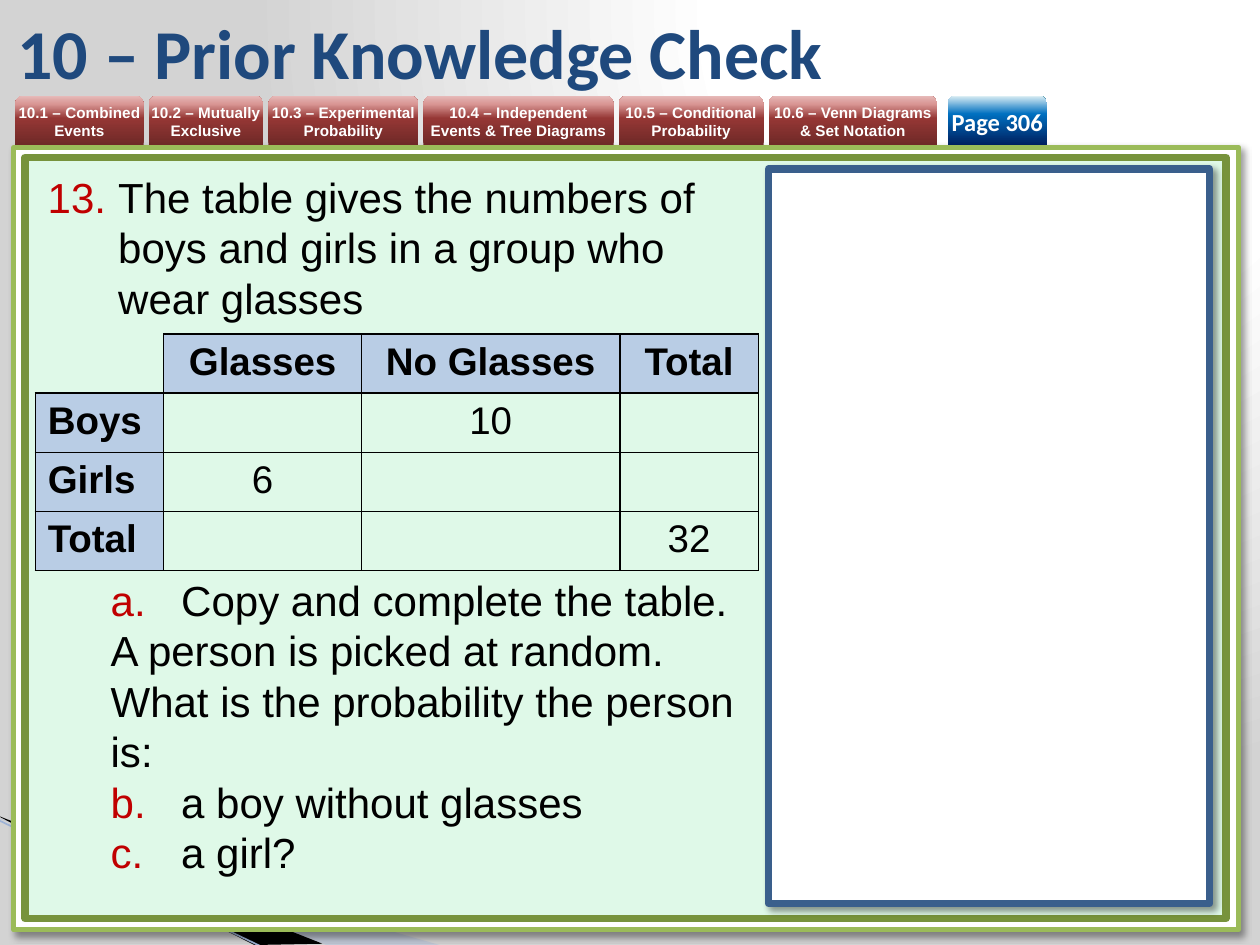
from lxml.etree import SubElement
from pptx import Presentation
from pptx.dml.color import RGBColor
from pptx.enum.shapes import MSO_CONNECTOR, MSO_SHAPE
from pptx.enum.text import MSO_ANCHOR, PP_ALIGN
from pptx.oxml.ns import qn
from pptx.util import Emu, Inches, Pt

BLACK = RGBColor(0, 0, 0)
WHITE = RGBColor(255, 255, 255)
NAVY = RGBColor(0x1F, 0x49, 0x7D)
RED = RGBColor(0xC0, 0, 0)
PALE_BLUE = RGBColor(0xB9, 0xCD, 0xE5)
SWOOSH_BLUE = RGBColor(0xA7, 0xB9, 0xDB)
SWOOSH_LINE = RGBColor(0x9E, 0xB3, 0xD6)
LIME = RGBColor(0x9B, 0xBB, 0x59)
OLIVE = RGBColor(0x77, 0x93, 0x3C)
MINT = RGBColor(0xDF, 0xF9, 0xE8)
STEEL = RGBColor(0x3A, 0x5F, 0x8C)

BACKDROP = [(0, "FFFFFF"), (40, "FFFFFF"), (100, "D3D3D3")]
TAB_RED = [(0, "6F2927"), (54, "953735"), (83, "D99694"), (100, "E6B9B8")]
PAGE_BLUE = [(0, "002060"), (63, "0070C0"), (100, "DBEEF4")]

TITLE = "10 – Prior Knowledge Check"
PAGE = "Page 306"
SECTIONS = [
    ("10.1 – Combined Events", 1.02),
    ("10.2 – Mutually Exclusive", 0.91),
    ("10.3 – Experimental Probability", 1.19),
    ("10.4 – Independent Events & Tree Diagrams", 1.51),
    ("10.5 – Conditional Probability", 1.15),
    ("10.6 – Venn Diagrams & Set Notation", 1.34),
]
PANELS = [
    ((0.11, 1.17, 9.72, 6.21), WHITE, LIME, 3, True),
    ((0.2, 1.25, 9.53, 6.04), MINT, OLIVE, 4.33, False),
    ((6.1, 1.34, 3.5, 5.83), WHITE, STEEL, 4.33, True),
]
QUESTION = [
    ("The table gives the numbers of boys and girls in a group who wear glasses",
     0.56, -0.56, ("arabicPeriod", 13)),
    ("Copy and complete the table.", 1.06, -0.56, ("alphaLcPeriod", 1)),
    ("A person is picked at random.\vWhat is the probability the person is:", 0.5, 0, None),
    ("a boy without glasses", 1.06, -0.56, ("alphaLcPeriod", 2)),
    ("a girl?", 1.06, -0.56, ("alphaLcPeriod", 2)),
]
TABLE_GAP = 144
GLASSES = [
    ["", "Glasses", "No Glasses", "Total"],
    ["Boys", "", "10", ""],
    ["Girls", "6", "", ""],
    ["Total", "", "", "32"],
]
COLUMN_WIDTHS = [1.02, 1.57, 2.05, 1.1]
ROW_HEIGHT = 0.47
TAB_TOP, TAB_HEIGHT, TAB_GAP = 0.76, 0.39, 0.04


def box(*lengths):
    return [Inches(length) for length in lengths]


def style(font, name, size, color, bold=False):
    font.name, font.size, font.bold = name, Pt(size), bold
    font.color.rgb = color


def set_gradient(fill, owner, stops, angle=None):
    fill.gradient()
    gradient = next(owner.iter(qn("a:gradFill")))
    for child in list(gradient):
        gradient.remove(child)
    stop_list = SubElement(gradient, qn("a:gsLst"))
    for position, color in stops:
        stop = SubElement(stop_list, qn("a:gs"), pos=str(position * 1000))
        SubElement(stop, qn("a:srgbClr"), val=color)
    if angle is None:
        circle = SubElement(gradient, qn("a:path"), path="circle")
        SubElement(circle, qn("a:fillToRect"), l="65000", t="0", r="0", b="98000")
    else:
        SubElement(gradient, qn("a:lin"), ang=str(angle * 60000), scaled="0")


def add_swoosh(slide, points, color, alpha=100):
    corners = [box(*point) for point in points]
    builder = slide.shapes.build_freeform(*corners[0], scale=1.0)
    builder.add_line_segments(corners[1:], close=True)
    swoosh = builder.convert_to_shape()
    swoosh.shadow.inherit = False
    swoosh.fill.solid()
    swoosh.fill.fore_color.rgb = color
    swoosh.line.fill.background()
    tint = next(swoosh._element.spPr.iter(qn("a:srgbClr")))
    SubElement(tint, qn("a:alpha"), val=str(alpha * 1000))


def add_panel(slide, place, fill, line, width, shadowed):
    panel = slide.shapes.add_shape(MSO_SHAPE.RECTANGLE, *box(*place))
    panel.fill.solid()
    panel.fill.fore_color.rgb = fill
    panel.line.color.rgb = line
    panel.line.width = Pt(width)
    panel.shadow.inherit = False
    if shadowed:
        effects = panel._element.spPr.find(qn("a:effectLst"))
        shadow = SubElement(effects, qn("a:outerShdw"), blurRad=str(Pt(4)),
                            dist=str(Pt(3)), dir="2700000", rotWithShape="0")
        color = SubElement(shadow, qn("a:srgbClr"), val="000000")
        SubElement(color, qn("a:alpha"), val="40000")


def add_tab(slide, text, left, width, stops, font, size, spacing=None):
    tab = slide.shapes.add_shape(MSO_SHAPE.ROUND_2_SAME_RECTANGLE,
                                 *box(left, TAB_TOP, width, TAB_HEIGHT))
    tab.shadow.inherit = False
    tab.line.fill.background()
    set_gradient(tab.fill, tab._element.spPr, stops, 270)
    frame = tab.text_frame
    frame.margin_left = frame.margin_right = frame.margin_top = frame.margin_bottom = 0
    frame.word_wrap = True
    frame.vertical_anchor = MSO_ANCHOR.MIDDLE
    frame.text = text
    label = frame.paragraphs[0]
    label.alignment = PP_ALIGN.CENTER
    label.line_spacing = spacing
    style(label.runs[0].font, font, size, WHITE, True)


def add_question(slide):
    frame = slide.shapes.add_textbox(*box(0.28, 1.31, 5.75, 5.76)).text_frame
    frame.word_wrap = True
    for index, (text, margin, indent, numbering) in enumerate(QUESTION):
        part = frame.add_paragraph() if index else frame.paragraphs[0]
        part.text = text
        part.level = min(index, 1)
        props = part._p.get_or_add_pPr()
        props.set("marL", str(Inches(margin)))
        props.set("indent", str(Inches(indent)))
        if numbering:
            scheme, start = numbering
            color = SubElement(props, qn("a:buClr"))
            SubElement(color, qn("a:srgbClr"), val=str(RED))
            SubElement(props, qn("a:buFont"), typeface="+mj-lt")
            SubElement(props, qn("a:buAutoNum"), type=scheme, startAt=str(start))
        else:
            SubElement(props, qn("a:buNone"))
        tabs = SubElement(props, qn("a:tabLst"))
        for position in (0.94, 3):
            SubElement(tabs, qn("a:tab"), pos=str(Inches(position)), algn="l")
        if index == 1:
            part.space_before = Pt(TABLE_GAP)
        for run in part.runs:
            style(run.font, "Arial", 24, BLACK)


def set_borders(cell, hidden):
    props = cell._tc.get_or_add_tcPr()
    for order, side in enumerate("LRTB"):
        line = SubElement(props, qn("a:ln" + side), w=str(Pt(1)))
        props.insert(order, line)
        if side in hidden:
            SubElement(line, qn("a:noFill"))
        else:
            SubElement(SubElement(line, qn("a:solidFill")), qn("a:srgbClr"), val=str(BLACK))


def add_glasses_table(slide):
    rows, columns = len(GLASSES), len(COLUMN_WIDTHS)
    table = slide.shapes.add_table(rows, columns, *box(
        0.28, 2.65, sum(COLUMN_WIDTHS), rows * ROW_HEIGHT)).table
    table.first_row = table.horz_banding = False
    for column, width in zip(table.columns, COLUMN_WIDTHS):
        column.width = Inches(width)
    for r, values in enumerate(GLASSES):
        for c, value in enumerate(values):
            cell = table.cell(r, c)
            heading = r == 0 or c == 0
            cell.text = value
            entry = cell.text_frame.paragraphs[0]
            entry.alignment = PP_ALIGN.CENTER if c else PP_ALIGN.LEFT
            style(entry.font, "Arial", 22, BLACK, heading)
            for run in entry.runs:
                style(run.font, "Arial", 22, BLACK, heading)
            if heading and value:
                cell.fill.solid()
                cell.fill.fore_color.rgb = PALE_BLUE
            else:
                cell.fill.background()
            set_borders(cell, "" if r or c else "LT")


def main():
    deck = Presentation()
    deck.slide_width, deck.slide_height = box(10, 7.5)
    slide = deck.slides.add_slide(deck.slide_layouts[6])
    set_gradient(slide.background.fill, slide._element, BACKDROP)

    add_swoosh(slide, [(-0.01, 6.5), (3.49, 7.5), (2.59, 7.5), (-0.01, 6.49)], SWOOSH_BLUE, 40)
    add_swoosh(slide, [(0, 6.48), (2.56, 7.49), (2.02, 7.5), (0.01, 6.49)], BLACK)
    edge = slide.shapes.add_connector(MSO_CONNECTOR.STRAIGHT, *box(-0.01, 6.51, 2.09, 7.52))
    edge.line.color.rgb = SWOOSH_LINE
    edge.line.width = Pt(0.95)
    SubElement(edge._element.spPr, qn("a:effectLst"))

    for panel in PANELS:
        add_panel(slide, *panel)

    left = 0.12
    for text, width in SECTIONS:
        add_tab(slide, text, left, width, TAB_RED, "Arial", 8.7, Pt(10))
        left += width + TAB_GAP
    add_tab(slide, PAGE, left + TAB_GAP, 0.79, PAGE_BLUE, "Calibri", 14)

    title = slide.shapes.add_textbox(*box(0.04, 0.05, 8.27, 0.71)).text_frame
    title.word_wrap = True
    title.vertical_anchor = MSO_ANCHOR.MIDDLE
    title.text = TITLE
    style(title.paragraphs[0].runs[0].font, "Calibri", 40, NAVY, True)

    add_question(slide)
    add_glasses_table(slide)
    deck.save("out.pptx")


if __name__ == "__main__":
    main()
